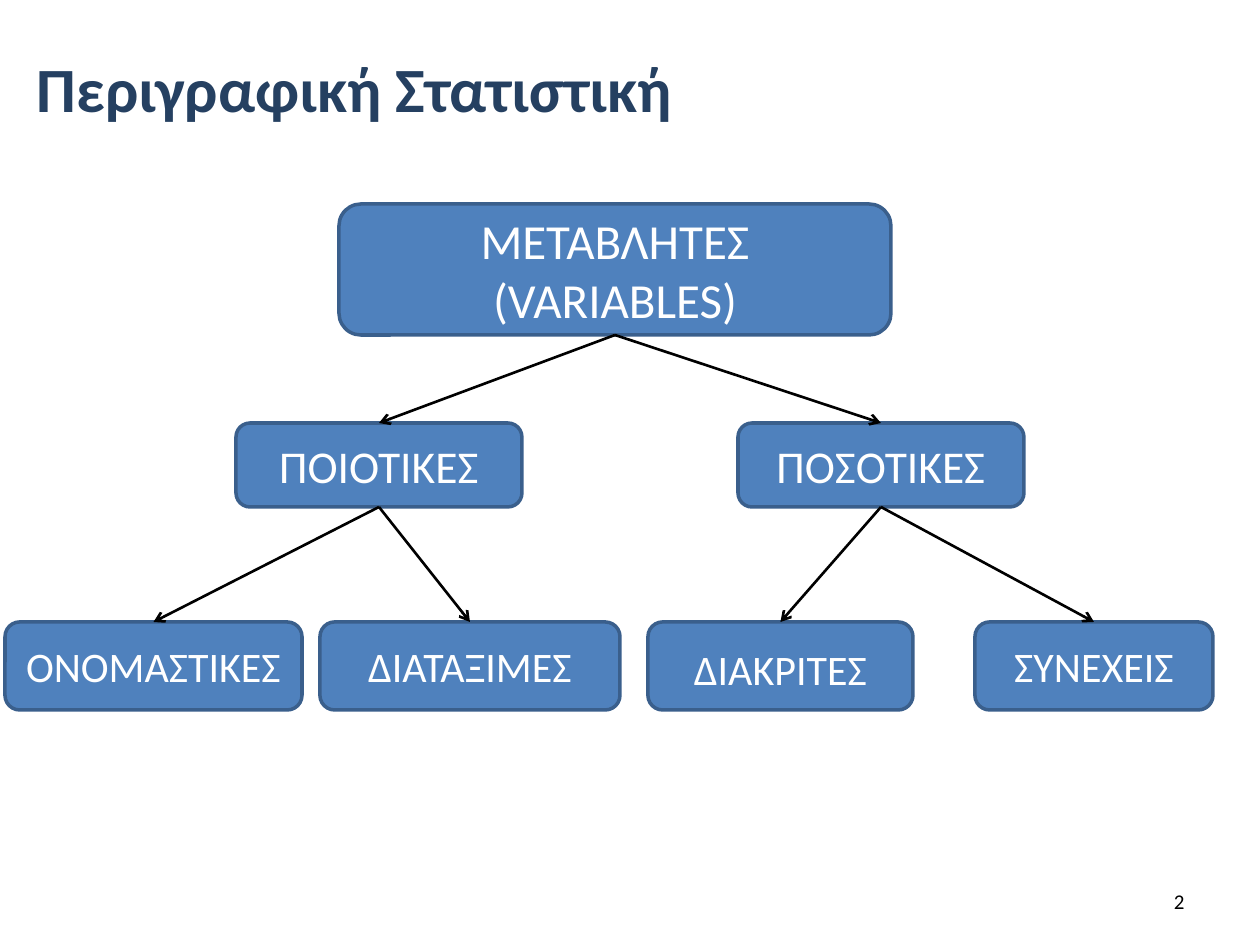
"""Build the slide with the tree of variable types in descriptive statistics."""
from dataclasses import dataclass

from pptx import Presentation, util as u
from pptx.dml.color import RGBColor
from pptx.enum import shapes, text
from pptx.oxml.ns import qn
from lxml import etree

SCALE = 914400 / 126


@dataclass(frozen=True)
class Theme:
    font: str = "Calibri"
    fill: str = "4F81BD"
    outline: str = "3A5F8C"
    box_text: str = "FFFFFF"
    title: str = "254061"
    ink: str = "000000"
    title_size: int = 36
    root_size: int = 28
    branch_size: int = 26
    leaf_size: int = 24
    number_size: int = 12
    outline_width: float = 2
    arrow_width: float = 1.5


@dataclass(frozen=True)
class Node:
    label: str
    x: int
    y: int
    w: int
    h: int
    size: int
    parent: str = ""
    spacing: float = 1.0


@dataclass(frozen=True)
class Label:
    label: str
    x: int
    y: int
    w: int
    h: int
    size: int
    color: str
    align: text.PP_ALIGN
    anchor: text.MSO_ANCHOR = text.MSO_ANCHOR.MIDDLE
    bold: bool = False
    inset: int = 13


T = Theme()
ROOT, QUALITATIVE, QUANTITATIVE = "ΜΕΤΑΒΛΗΤΕΣ\n(VARIABLES)", "ΠΟΙΟΤΙΚΕΣ", "ΠΟΣΟΤΙΚΕΣ"
BRANCH = dict(y=423, w=286, h=84, size=T.branch_size, parent=ROOT)
LEAF = dict(y=622, h=88, size=T.leaf_size)
NODES = [
    Node(ROOT, 339, 204, 552, 131, T.root_size),
    Node(QUALITATIVE, x=236, **BRANCH),
    Node(QUANTITATIVE, x=738, **BRANCH),
    Node("ΟΝΟΜΑΣΤΙΚΕΣ", x=5, w=297, parent=QUALITATIVE, **LEAF),
    Node("ΔΙΑΤΑΞΙΜΕΣ", x=320, w=300, parent=QUALITATIVE, **LEAF),
    Node("ΔΙΑΚΡΙΤΕΣ", x=648, w=265, parent=QUANTITATIVE, spacing=1.1, **LEAF),
    Node("ΣΥΝΕΧΕΙΣ", x=975, w=238, parent=QUANTITATIVE, **LEAF),
]
LABELS = [
    Label("Περιγραφική Στατιστική", 0, 0, 1260, 175, T.title_size, T.title,
          text.PP_ALIGN.LEFT, bold=True, inset=37),
    Label("2", 903, 876, 294, 50, T.number_size, T.ink, text.PP_ALIGN.RIGHT),
]


def px(n: int) -> u.Emu:
    """Turn px into EMU."""
    return u.Emu(round(n * SCALE))


def frame(item: Node | Label) -> list[u.Emu]:
    """Return left, top, width and height in EMU."""
    return [px(n) for n in (item.x, item.y, item.w, item.h)]


def write(tf, label: str, size: int, color: str, align: text.PP_ALIGN,
          anchor: text.MSO_ANCHOR = text.MSO_ANCHOR.MIDDLE,
          bold: bool = False, spacing: float = 1.0) -> None:
    """Fill a text frame, one paragraph for each line."""
    tf.word_wrap = True
    tf.vertical_anchor = anchor
    tf.text = label
    for p in tf.paragraphs:
        p.alignment = align
        p.line_spacing = spacing
        p.font.name = T.font
        p.font.size = u.Pt(size)
        p.font.bold = bold
        p.font.color.rgb = RGBColor.from_string(color)


def add_node(s, node: Node):
    """Draw one box of the tree."""
    sp = s.shapes.add_shape(shapes.MSO_SHAPE.FLOWCHART_ALTERNATE_PROCESS, *frame(node))
    sp.shadow.inherit = False
    sp.fill.solid()
    sp.fill.fore_color.rgb = RGBColor.from_string(T.fill)
    sp.line.color.rgb = RGBColor.from_string(T.outline)
    sp.line.width = u.Pt(T.outline_width)
    write(sp.text_frame, node.label, node.size, T.box_text,
          text.PP_ALIGN.CENTER, spacing=node.spacing)
    return sp


def add_arrow(s, parent, child) -> None:
    """Join the bottom of a parent box to the top of its child."""
    c = s.shapes.add_connector(shapes.MSO_CONNECTOR.STRAIGHT, 0, 0, 0, 0)
    c.begin_connect(parent, 2)
    c.end_connect(child, 0)
    c.line.color.rgb = RGBColor.from_string(T.ink)
    c.line.width = u.Pt(T.arrow_width)
    sp_pr = c.element.spPr
    etree.SubElement(sp_pr.find(qn("a:ln")), qn("a:tailEnd"), type="arrow")
    etree.SubElement(sp_pr, qn("a:effectLst"))


def add_label(s, label: Label) -> None:
    """Draw a text box without fill."""
    tf = s.shapes.add_textbox(*frame(label)).text_frame
    tf.margin_left = px(label.inset)
    write(tf, label.label, label.size, label.color, label.align, label.anchor, label.bold)


def main() -> None:
    """Build and save the slide."""
    prs = Presentation()
    prs.slide_width, prs.slide_height = px(1260), px(945)
    s = prs.slides.add_slide(prs.slide_layouts[6])
    boxes = {node.label: add_node(s, node) for node in NODES}
    for node in NODES:
        if node.parent:
            add_arrow(s, boxes[node.parent], boxes[node.label])
    for label in LABELS:
        add_label(s, label)
    prs.save("out.pptx")


if __name__ == "__main__":
    main()
